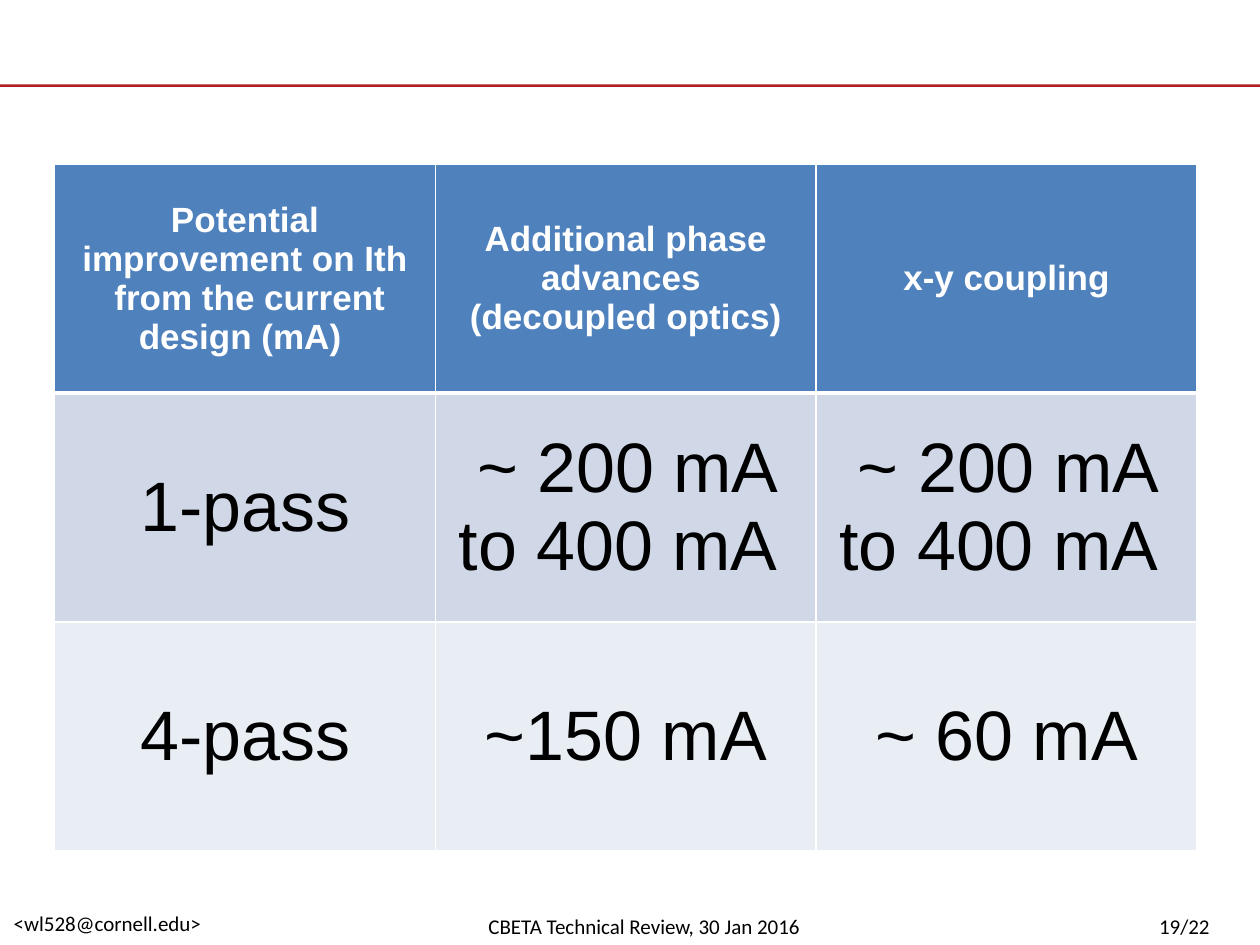
from pptx import Presentation
from pptx.dml.color import RGBColor
from pptx.enum.shapes import MSO_SHAPE as Shape
from pptx.enum.text import MSO_ANCHOR as Anchor, PP_ALIGN as Align
from pptx.oxml import parse_xml
from pptx.oxml.ns import nsdecls
from pptx.util import Pt


def tint(code):
    return RGBColor.from_string(code)


class Deck:
    white, black, red = "FFFFFF", "000000", "B21F22"
    fills = ["4F81BD", "D0D8E8", "E9EDF4"]

    def __init__(self):
        self.prs = Presentation()
        self.prs.slide_width, self.prs.slide_height = Pt(720), Pt(540)
        self.slide = self.prs.slides.add_slide(self.prs.slide_layouts[6])

    def run(self, para, text, size, font, color, bold=False):
        run = para.add_run()
        run.text = text
        run.font.size, run.font.name, run.font.bold = Pt(size), font, bold
        run.font.color.rgb = tint(color)

    def note(self, text, left, top, width):
        box = self.slide.shapes.add_textbox(Pt(left), Pt(top), Pt(width), Pt(21.8))
        frame = box.text_frame
        frame.word_wrap = True
        frame.margin_right = 0
        self.run(frame.paragraphs[0], text, 12, "Calibri", self.black)

    def bar(self, left, top, width, height):
        bar = self.slide.shapes.add_shape(
            Shape.RECTANGLE, Pt(left), Pt(top), Pt(width), Pt(height))
        bar.shadow.inherit = False
        bar.fill.solid()
        bar.fill.fore_color.rgb = tint(self.red)
        bar.line.fill.background()

    def edge(self, cell, side, width):
        line = parse_xml(
            f'<a:{side} {nsdecls("a")} w="{Pt(width)}"><a:solidFill>'
            f'<a:srgbClr val="{self.white}"/></a:solidFill></a:{side}>')
        cell._tc.get_or_add_tcPr().append(line)

    def cell(self, cell, lines, head, fill, top, base):
        for side, width in [("lnL", 1), ("lnR", 1), ("lnT", top), ("lnB", base)]:
            self.edge(cell, side, width)
        cell.fill.solid()
        cell.fill.fore_color.rgb = tint(fill)
        cell.vertical_anchor = Anchor.MIDDLE
        frame = cell.text_frame
        size, color = (20, self.white) if head else (40, self.black)
        for i, text in enumerate(lines):
            para = frame.add_paragraph() if i else frame.paragraphs[0]
            para.alignment = Align.CENTER
            self.run(para, text, size, "Arial", color, head)

    def table(self, rows, left, top, width, height):
        grid = self.slide.shapes.add_table(
            len(rows), len(rows[0]), Pt(left), Pt(top), Pt(width), Pt(height)).table
        for r, row in enumerate(rows):
            for c, lines in enumerate(row):
                self.cell(grid.cell(r, c), lines, r == 0, self.fills[r],
                          3 if r == 1 else 1, 3 if r == 0 else 1)


def main():
    deck = Deck()
    deck.note("<wl528@cornell.edu>", 0.8, 517, 147)
    deck.note("19/22", 655.2, 518.2, 109.4)
    deck.note("CBETA Technical Review, 30 Jan 2016", 272, 518.2, 190)
    deck.bar(0, 48.2, 720, 1.5)
    deck.table([
        [["Potential improvement on Ith", " from the current design (mA) "],
         ["Additional phase advances ", "(decoupled optics)"],
         ["x-y coupling"]],
        [["1-pass"], ["~ 200 mA to 400 mA "], ["~ 200 mA to 400 mA "]],
        [["4-pass"], ["~150 mA"], ["~ 60 mA"]],
    ], 31.2, 93.8, 652.8, 392.4)
    deck.prs.save("out.pptx")


if __name__ == "__main__":
    main()
